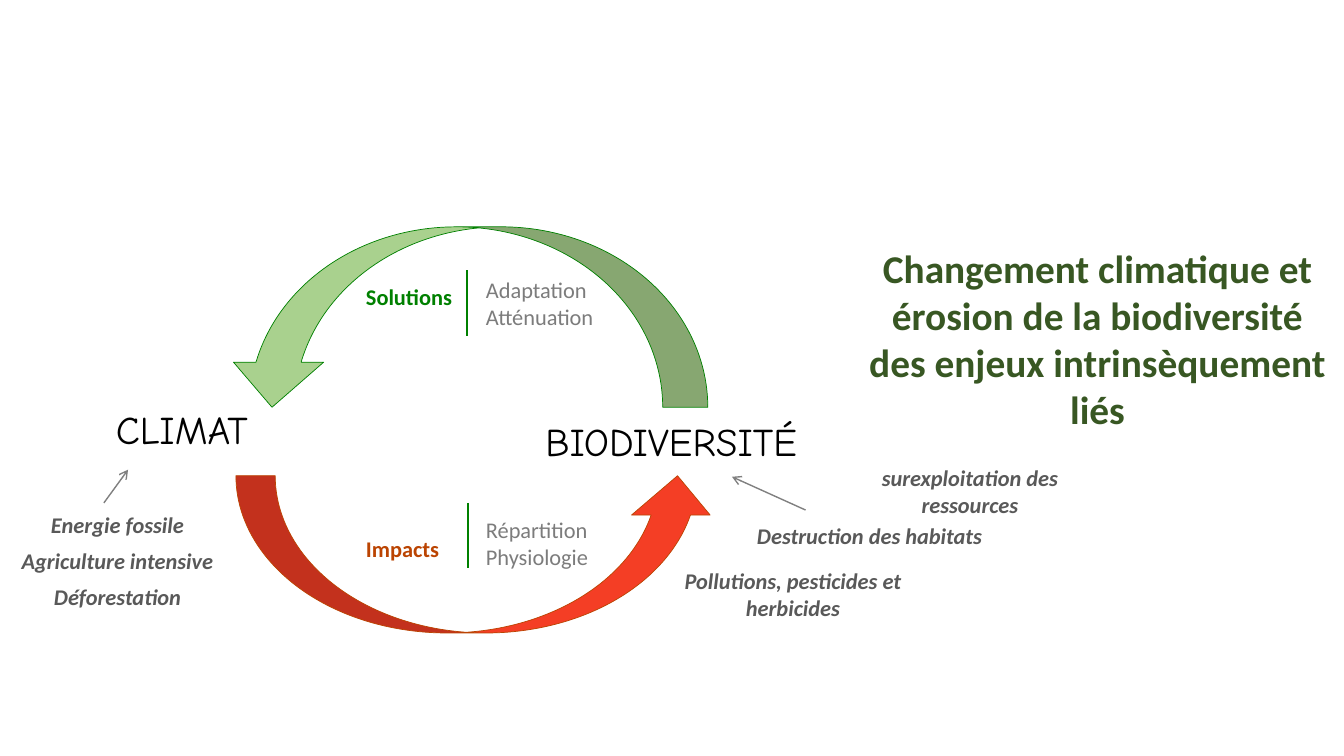
from lxml import etree
from pptx import Presentation
from pptx import util as u
from pptx.dml.color import RGBColor
from pptx.enum import shapes, text
from pptx.oxml.ns import qn

GREEN, RUST, GREY, DARK = "008000", "BB4402", "7C7C7C", "595959"


def rgb(value):
    return RGBColor.from_string(value)


class Board:
    """Holds the slide and the common text and line styles."""
    font = "Calibri"
    size = 16

    def __init__(self, slide):
        self.s = slide

    def label(self, box, lines, color, size=None, font=None, bold=False,
              italic=False, center=False, wrap=False, grow=True, after=0,
              margins=(0.12, 0.06)):
        sp = self.s.shapes.add_textbox(*map(u.Inches, box))
        tf = sp.text_frame
        tf.word_wrap = wrap
        tf.auto_size = (text.MSO_AUTO_SIZE.SHAPE_TO_FIT_TEXT if grow
                        else text.MSO_AUTO_SIZE.NONE)
        tf.margin_left = tf.margin_right = u.Inches(margins[0])
        tf.margin_top = tf.margin_bottom = u.Inches(margins[1])
        tf.text = "\n".join(lines)
        for p in tf.paragraphs:
            if center:
                p.alignment = text.PP_ALIGN.CENTER
            if after:
                p.space_after = u.Pt(after)
            p.font.name = font or self.font
            p.font.size = u.Pt(size or self.size)
            p.font.bold = bold
            p.font.italic = italic
            p.font.color.rgb = rgb(color)

    def cause(self, box, lines, after=0):
        self.label(box, lines, DARK, bold=True, italic=True, center=True,
                   wrap=True, after=after, margins=(0.1, 0.05))

    def curved_arrow(self, box, fill, line, rotation=0):
        sp = self.s.shapes.add_shape(shapes.MSO_SHAPE.CURVED_UP_ARROW,
                                     *map(u.Inches, box))
        sp.rotation = rotation
        sp.shadow.inherit = False
        sp.fill.solid()
        sp.fill.fore_color.rgb = rgb(fill)
        sp.line.color.rgb = rgb(line)
        sp.line.width = u.Pt(0.5)

    def line(self, start, end, color, arrow=False):
        c = self.s.shapes.add_connector(shapes.MSO_CONNECTOR.STRAIGHT,
                                        *map(u.Inches, start + end))
        c.line.color.rgb = rgb(color)
        c.line.width = u.Pt(1)
        if arrow:
            etree.SubElement(c.line._get_or_add_ln(), qn("a:tailEnd"), type="arrow")
        etree.SubElement(c._element.spPr, qn("a:effectLst"))


def main():
    prs = Presentation()
    prs.slide_width, prs.slide_height = u.Inches(13.33), u.Inches(7.5)
    b = Board(prs.slides.add_slide(prs.slide_layouts[6]))

    for box, name in (((1.03, 3.96, 2.13, 0.59), "CLIMAT"),
                      ((5.29, 4.08, 3.64, 0.59), "BIODIVERSITÉ")):
        b.label(box, [name], "000000", size=28, font="Comic Neue")

    b.curved_arrow((2.34, 4.72, 4.77, 1.56), "F43E25", RUST)
    b.curved_arrow((2.25, 2.25, 4.77, 1.79), "A9D18E", GREEN, rotation=180)

    for name, color, y, x, line_y, details, details_y in (
            ("Solutions", GREEN, 2.75, 4.63, 2.68,
             ["Adaptation", "Atténuation"], 2.68),
            ("Impacts", RUST, 5.25, 4.64, 4.99,
             ["Répartition", "Physiologie"], 5.06)):
        b.label((3.51, y, 1.11, 0.39), [name], color, bold=True)
        b.line((x, line_y), (x, line_y + 0.65), GREEN)
        b.label((4.7, details_y, 1.33, 0.66), details, GREY)

    b.label((8.49, 2.36, 4.79, 1.48),
            ["Changement climatique et érosion de la biodiversité "
             "des enjeux intrinsèquement liés"],
            "385723", size=28.1, bold=True, center=True, wrap=True, grow=False)

    b.cause((-0.13, 5.02, 2.59, 1.43),
            ["Energie fossile", "Agriculture intensive", "Déforestation"], after=6.5)
    b.cause((8.24, 4.56, 2.76, 0.64), ["surexploitation des ressources"])
    b.cause((7.09, 5.13, 3.07, 0.37), ["Destruction des habitats"])
    b.cause((6.32, 5.58, 3.09, 0.64), ["Pollutions, pesticides et herbicides"])
    b.line((1.03, 4.99), (1.27, 4.66), "808080", arrow=True)
    b.line((7.99, 5.06), (7.26, 4.73), "808080", arrow=True)

    prs.save("out.pptx")


if __name__ == "__main__":
    main()
